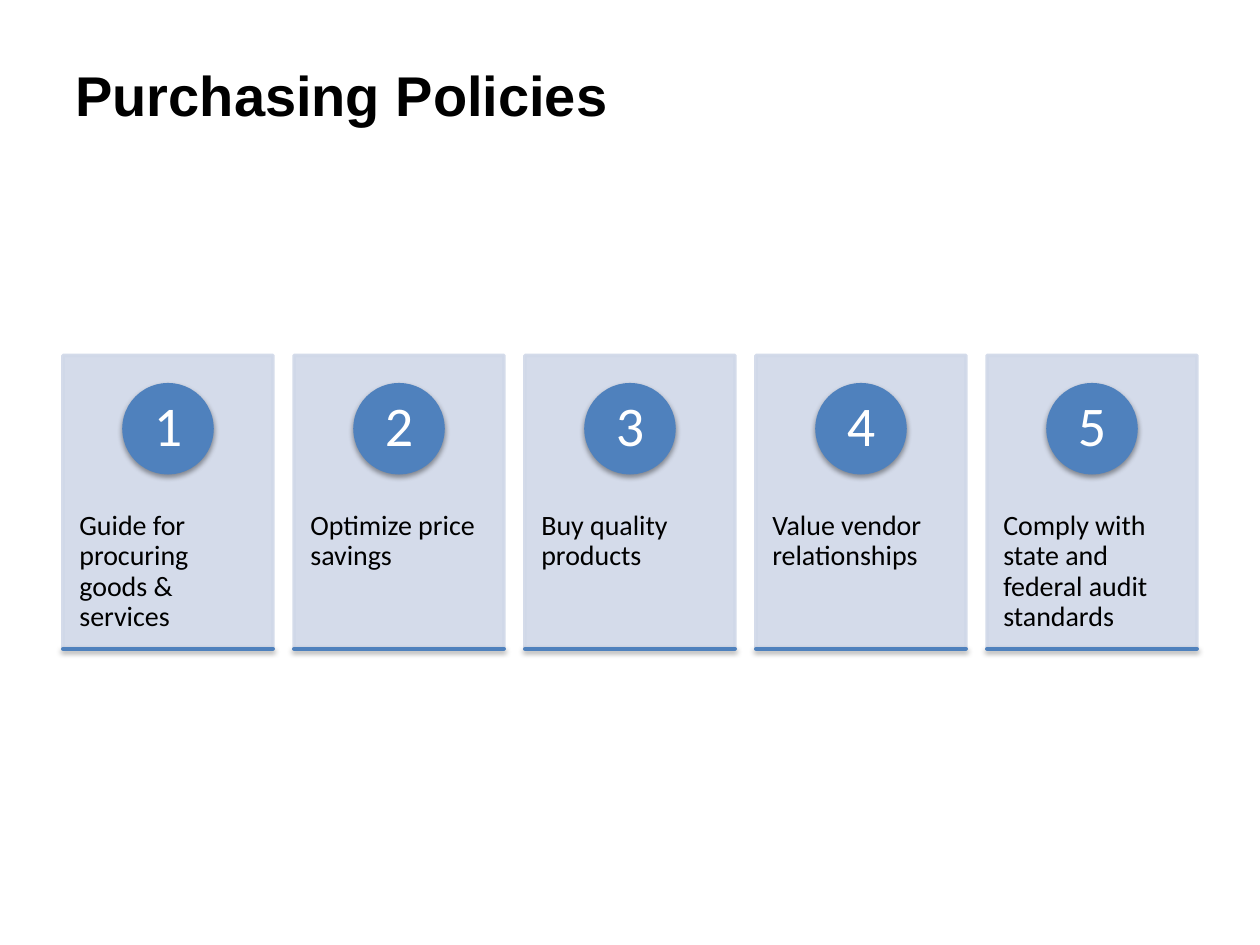
from dataclasses import dataclass

from lxml import etree
from pptx import Presentation, util as u
from pptx.dml.color import RGBColor
from pptx.enum import shapes, text
from pptx.oxml import ns

BLACK = RGBColor(0x00, 0x00, 0x00)
WHITE = RGBColor(0xFF, 0xFF, 0xFF)
PALE_BLUE = RGBColor(0xD0, 0xD8, 0xE8)
BLUE = RGBColor(0x4F, 0x81, 0xBD)

SLIDE_W, SLIDE_H = 10, 7.5
MARGIN = 0.05 * SLIDE_W
GAP_SHARE = 0.1  # gap between cards as a share of card width
CARD_TOP, CARD_H = 2.82, 2.33
BADGE_SIZE = 0.3 * CARD_H
POLICIES = [
    "Guide for procuring goods & services",
    "Optimize price savings",
    "Buy quality products",
    "Value vendor relationships",
    "Comply with state and federal audit standards",
]
CARD_W = (SLIDE_W - 2 * MARGIN) / (len(POLICIES) + GAP_SHARE * (len(POLICIES) - 1))


@dataclass
class Box:
    left: float
    top: float
    width: float
    height: float

    def emu(self) -> list:
        return [u.Inches(n) for n in (self.left, self.top, self.width, self.height)]


@dataclass
class Style:
    size: int
    color: RGBColor
    insets: tuple
    font: str = "Calibri"
    bold: bool = False
    align: text.PP_ALIGN = text.PP_ALIGN.LEFT
    anchor: text.MSO_ANCHOR = text.MSO_ANCHOR.TOP
    spacing: float = 0.9


TITLE = Style(32, BLACK, (0.1, 0.05, 0.1, 0.05), font="Arial", bold=True,
              anchor=text.MSO_ANCHOR.MIDDLE, spacing=1.0)
BODY = Style(16, BLACK, (0.13, 1.24, 0.13, 0))
NUMBER = Style(32, WHITE, (0.05, 0.01, 0.05, 0.01),
               align=text.PP_ALIGN.CENTER, anchor=text.MSO_ANCHOR.MIDDLE)


def write(shape, words: str, style: Style) -> None:
    frame = shape.text_frame
    frame.text = words
    paragraph = frame.paragraphs[0]
    left, top, right, bottom = (u.Inches(n) for n in style.insets)
    formats = [
        (frame, dict(word_wrap=True, vertical_anchor=style.anchor, margin_left=left,
                     margin_top=top, margin_right=right, margin_bottom=bottom)),
        (paragraph, dict(alignment=style.align, line_spacing=style.spacing)),
        (paragraph.font, dict(size=u.Pt(style.size), name=style.font, bold=style.bold)),
    ]
    for target, values in formats:
        for key, value in values.items():
            setattr(target, key, value)
    paragraph.font.color.rgb = style.color


def add_filled(slide, kind: shapes.MSO_SHAPE, box: Box, color: RGBColor):
    shape = slide.shapes.add_shape(kind, *box.emu())
    shape.shadow.inherit = False
    shape.fill.solid()
    shape.fill.fore_color.rgb = color
    shape.line.color.rgb = color
    shape.line.width = u.Pt(2)
    return shape


def set_alpha(color_element, percent: int) -> None:
    etree.SubElement(color_element, ns.qn("a:alpha"), val=str(percent * 1000))


def add_shadow(shape) -> None:
    """Cast a soft black shadow straight down."""
    effects = shape.element.spPr.find(ns.qn("a:effectLst"))
    shadow = etree.SubElement(effects, ns.qn("a:outerShdw"), blurRad=str(u.Pt(3.1)),
                              dist=str(u.Pt(1.6)), dir="5400000", rotWithShape="0")
    set_alpha(etree.SubElement(shadow, ns.qn("a:srgbClr"), val=str(BLACK)), 38)


def add_policy(slide, column: int, policy: str) -> None:
    left = MARGIN + column * CARD_W * (1 + GAP_SHARE)
    card = add_filled(slide, shapes.MSO_SHAPE.RECTANGLE,
                      Box(left, CARD_TOP, CARD_W, CARD_H), PALE_BLUE)
    for color in card.element.spPr.iter(ns.qn("a:srgbClr")):
        set_alpha(color, 90)
    write(card, policy, BODY)

    badge = add_filled(slide, shapes.MSO_SHAPE.OVAL,
                       Box(left + (CARD_W - BADGE_SIZE) / 2, CARD_TOP + CARD_H / 10,
                           BADGE_SIZE, BADGE_SIZE), BLUE)
    write(badge, str(column + 1), NUMBER)
    base = add_filled(slide, shapes.MSO_SHAPE.RECTANGLE,
                      Box(left, CARD_TOP + CARD_H, CARD_W, 0), BLUE)
    for raised in (badge, base):
        add_shadow(raised)


def main() -> None:
    deck = Presentation()
    deck.slide_width, deck.slide_height = u.Inches(SLIDE_W), u.Inches(SLIDE_H)
    slide = deck.slides.add_slide(deck.slide_layouts[6])
    title_box = Box(MARGIN, 0.12, SLIDE_W - 2 * MARGIN, SLIDE_H / 6)
    write(slide.shapes.add_textbox(*title_box.emu()), "Purchasing Policies", TITLE)
    for column, policy in enumerate(POLICIES):
        add_policy(slide, column, policy)
    deck.save("out.pptx")


if __name__ == "__main__":
    main()
